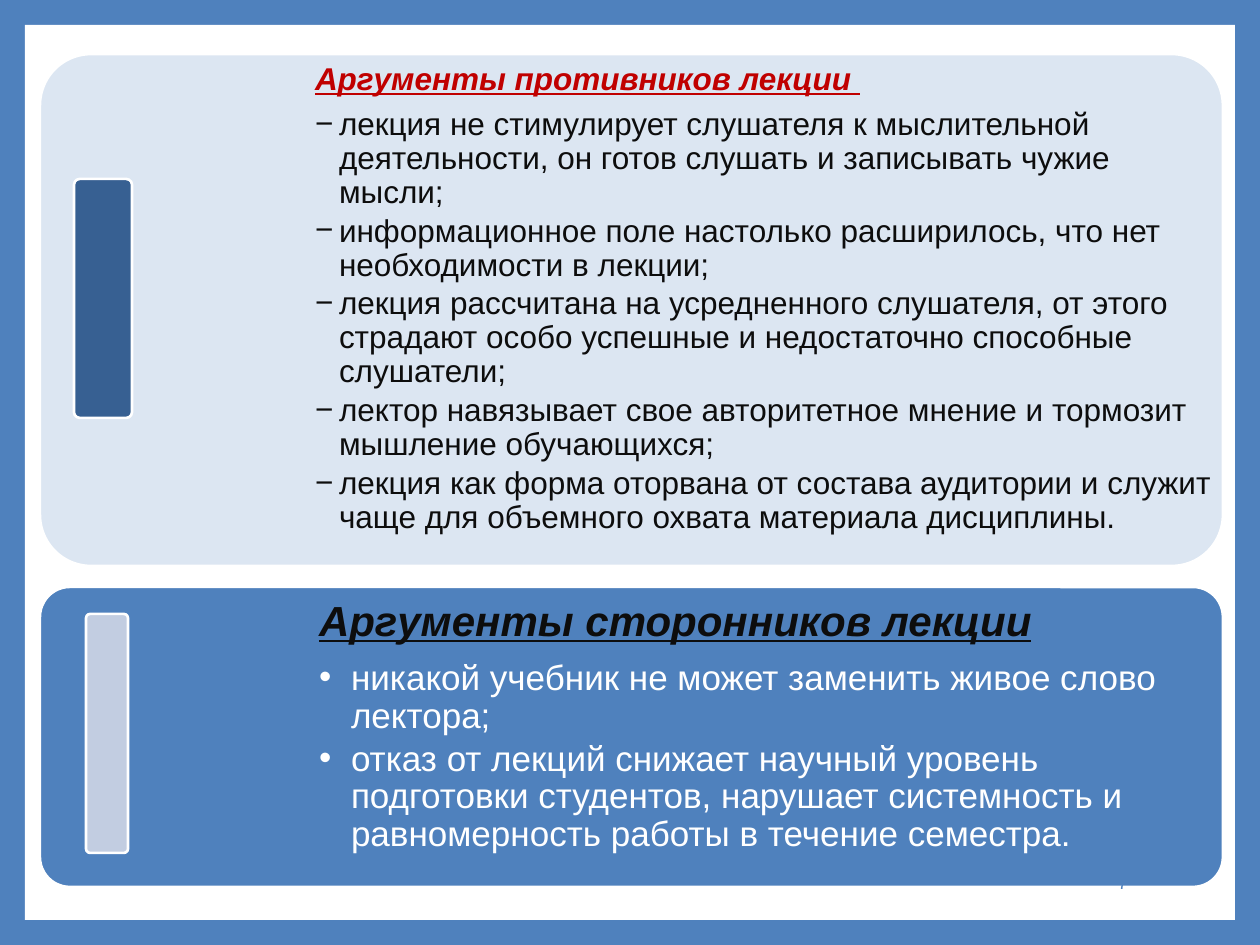
from lxml import etree
from pptx import Presentation
from pptx.dml.color import RGBColor
from pptx.enum.shapes import MSO_SHAPE
from pptx.enum.text import MSO_ANCHOR, MSO_AUTO_SIZE, PP_ALIGN
from pptx.oxml.ns import qn
from pptx.util import Emu, Pt

PX = 914400 / 126
RECT, ROUND = MSO_SHAPE.RECTANGLE, MSO_SHAPE.ROUNDED_RECTANGLE
TOP, MIDDLE = MSO_ANCHOR.TOP, MSO_ANCHOR.MIDDLE
NO_FIT = MSO_AUTO_SIZE.NONE
LEFT, RIGHT = PP_ALIGN.LEFT, PP_ALIGN.RIGHT

FONT = "Arial"
WHITE = RGBColor(0xFF, 0xFF, 0xFF)
BLUE = RGBColor(0x4F, 0x81, 0xBD)
PALE_BLUE = RGBColor(0xDC, 0xE6, 0xF2)
DARK_BLUE = RGBColor(0x37, 0x60, 0x92)
GREY_BLUE = RGBColor(0xC2, 0xCD, 0xE1)
RED = RGBColor(0xC0, 0x00, 0x00)
BLACK = RGBColor(0x0D, 0x0D, 0x0D)

PANEL_LEFT, PANEL_WIDTH = 40, 1183
TEXT_LEFT, TEXT_WIDTH = 306, 917

# One entry per panel; bar is left, top, width, height
PANELS = [
    dict(top=54, height=512, fill=PALE_BLUE,
         bar=(74, 179, 58, 239), bar_fill=DARK_BLUE,
         heading="Аргументы противников лекции ",
         heading_size=18, heading_color=RED,
         bullet="−", size=18, color=BLACK, inset=9, indent=24,
         items=[
             "лекция не стимулирует слушателя к мыслительной деятельности, "
             "он готов слушать и записывать чужие мысли;",
             "информационное поле настолько расширилось, что нет "
             "необходимости в лекции;",
             "лекция рассчитана на усредненного слушателя, от этого страдают "
             "особо успешные и недостаточно способные слушатели;",
             "лектор навязывает свое авторитетное мнение и тормозит мышление "
             "обучающихся;",
             "лекция как форма оторвана от состава аудитории и служит чаще "
             "для объемного охвата материала дисциплины.",
         ]),
    dict(top=587, height=300, fill=BLUE,
         bar=(86, 614, 42, 239), bar_fill=GREY_BLUE,
         heading="Аргументы сторонников лекции",
         heading_size=24, heading_color=BLACK,
         bullet="•", size=20, color=WHITE, inset=13, indent=32,
         items=[
             "никакой учебник не может заменить живое слово лектора;",
             "отказ от лекций снижает научный уровень подготовки студентов, "
             "нарушает системность и равномерность работы в течение семестра.",
         ]),
]


def px(length):
    return Emu(round(length * PX))


def add_block(page, kind, place, color, outlined=True):
    block = page.shapes.add_shape(kind, *map(px, place))
    block.shadow.inherit = False
    block.fill.solid()
    block.fill.fore_color.rgb = color
    if outlined:
        block.adjustments[0] = 0.1
        block.line.color.rgb = WHITE
        block.line.width = Pt(1.5)
    else:
        block.line.fill.background()


deck = Presentation()
deck.slide_width, deck.slide_height = px(1260), px(945)
page = deck.slides.add_slide(deck.slide_layouts.get_by_name("Two Content"))
title, *bodies = list(page.placeholders)[:3]
title.element.getparent().remove(title.element)

# Blue frame around a white sheet
page.background.fill.solid()
page.background.fill.fore_color.rgb = BLUE
add_block(page, RECT, (25, 25, 1210, 895), WHITE, outlined=False)

for panel, box in zip(PANELS, bodies):
    # Panel and its side bar
    add_block(page, ROUND, (PANEL_LEFT, panel["top"], PANEL_WIDTH, panel["height"]),
              panel["fill"])
    add_block(page, ROUND, panel["bar"], panel["bar_fill"])

    # Body placeholder, brought in front of the panel
    box.element.getparent().append(box.element)
    box.left, box.top = px(TEXT_LEFT), px(panel["top"])
    box.width, box.height = px(TEXT_WIDTH), px(panel["height"])
    frame = box.text_frame
    frame.word_wrap = True
    frame.auto_size = NO_FIT
    frame.vertical_anchor = TOP
    frame.margin_left = frame.margin_right = px(panel["inset"])
    frame.margin_top = frame.margin_bottom = px(panel["inset"])

    # Heading first, then the bulleted arguments
    for index, text in enumerate([panel["heading"], *panel["items"]]):
        is_heading = index == 0
        para = frame.paragraphs[0] if is_heading else frame.add_paragraph()
        size = panel["heading_size"] if is_heading else panel["size"]
        para.level = 0 if is_heading else 1
        para.alignment = LEFT
        para.line_spacing = 0.9
        para.space_before = Pt(0)
        para.space_after = Pt(size * (0.35 if is_heading else 0.15))

        indent = 0 if is_heading else px(panel["indent"])
        properties = para._p.get_or_add_pPr()
        properties.set("marL", str(indent))
        properties.set("indent", str(-indent))
        if is_heading:
            etree.SubElement(properties, qn("a:buNone"))
        else:
            etree.SubElement(properties, qn("a:buFont"), typeface=FONT)
            etree.SubElement(properties, qn("a:buChar"), char=panel["bullet"])

        span = para.add_run()
        span.text = text
        span.font.name = FONT
        span.font.size = Pt(size)
        span.font.bold = span.font.italic = span.font.underline = is_heading
        span.font.color.rgb = panel["heading_color"] if is_heading else panel["color"]

# Slide number
box = page.shapes.add_textbox(px(964), px(858), px(176), px(50))
box.text_frame.word_wrap = True
box.text_frame.vertical_anchor = MIDDLE
para = box.text_frame.paragraphs[0]
para.alignment = RIGHT
span = para.add_run()
span.text = "7"
span.font.name = FONT
span.font.size = Pt(10)
span.font.color.rgb = BLUE

deck.save("out.pptx")
